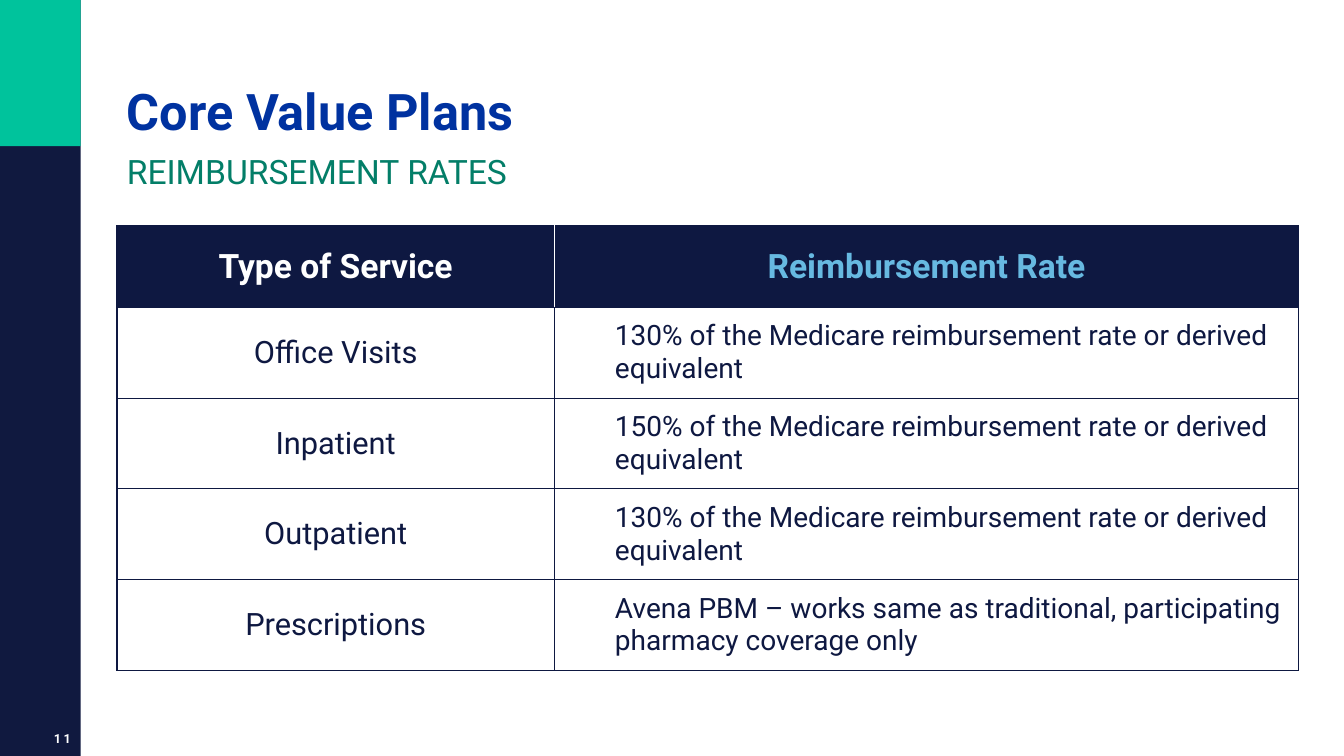
from dataclasses import dataclass

from lxml import etree
from pptx import Presentation
from pptx import util as u
from pptx.dml.color import RGBColor
from pptx.enum import shapes, text
from pptx.oxml import ns

PX = 9144  # EMU per px, 100 px to the inch
FONT = "Roboto"
INK = {
    "navy": "10193F",
    "teal": "00C39C",
    "grid": "0E1841",
    "blue": "0032A0",
    "green": "037E68",
    "sky": "67B9E1",
    "white": "FFFFFF",
}
LEFT, MID, RIGHT = text.PP_ALIGN.LEFT, text.PP_ALIGN.CENTER, text.PP_ALIGN.RIGHT
TOP, CENTER, BOTTOM = text.MSO_ANCHOR.TOP, text.MSO_ANCHOR.MIDDLE, text.MSO_ANCHOR.BOTTOM


@dataclass(frozen=True)
class Box:
    x: int
    y: int
    w: int
    h: int

    def emu(self) -> list[u.Emu]:
        return [u.Emu(v * PX) for v in (self.x, self.y, self.w, self.h)]


@dataclass(frozen=True)
class Style:
    size: int
    ink: str
    bold: bool = False
    align: text.PP_ALIGN = LEFT
    indent: int = 0
    leading: float = 1.0
    track: int = 0  # hundredths of a point


@dataclass(frozen=True)
class Label:
    words: str
    box: Box
    style: Style
    anchor: text.MSO_ANCHOR


BARS = [(Box(0, 0, 80, 750), "navy"), (Box(0, 0, 80, 145), "teal")]
LABELS = [
    Label("Core Value Plans", Box(116, 0, 1153, 145),
          Style(36, "blue", True, leading=0.9), BOTTOM),
    Label("11", Box(0, 716, 80, 34),
          Style(9, "white", True, RIGHT, track=170), CENTER),
    Label("REIMBURSEMENT RATES", Box(116, 145, 1153, 51), Style(24, "green"), TOP),
]

GRID = Box(116, 224, 1172, 441)
COLS = [434, 738]
ROWS = [81, 90, 90, 90, 90]
HEADS = [Style(24, "white", True, MID), Style(24, "sky", True, MID)]
BODY = [Style(22, "grid", align=MID), Style(20, "grid", indent=50)]
RATE = "of the Medicare reimbursement rate or derived equivalent"
RATES = [
    ("Type of Service", "Reimbursement Rate"),
    ("Office Visits", f"130% {RATE}"),
    ("Inpatient", f"150% {RATE}"),
    ("Outpatient", f"130% {RATE}"),
    ("Prescriptions",
     "Avena PBM – works same as traditional, participating pharmacy coverage only"),
]


def color(name: str) -> RGBColor:
    return RGBColor.from_string(INK[name])


def write(frame, words: str, style: Style) -> None:
    frame.word_wrap = True
    para = frame.paragraphs[0]
    para.alignment = style.align
    para.line_spacing = style.leading
    if style.indent:
        para.level = 1
        props = para._p.get_or_add_pPr()
        props.set("marL", str(style.indent * PX))
        props.set("indent", "0")
    run = para.add_run()
    run.text = words
    font = run.font
    font.name, font.size, font.bold = FONT, u.Pt(style.size), style.bold
    font.color.rgb = color(style.ink)
    if style.track:
        run._r.get_or_add_rPr().set("spc", str(style.track))


def add_bar(slide, box: Box, ink: str) -> None:
    bar = slide.shapes.add_shape(shapes.MSO_SHAPE.RECTANGLE, *box.emu())
    bar.shadow.inherit = False
    bar.fill.solid()
    bar.fill.fore_color.rgb = color(ink)
    bar.line.fill.background()


def add_label(slide, label: Label) -> None:
    frame = slide.shapes.add_textbox(*label.box.emu()).text_frame
    frame.vertical_anchor = label.anchor
    write(frame, label.words, label.style)


def edge(cell, inks: dict[str, str]) -> None:
    """Draw 1 pt cell borders; the lines must come before the fill."""
    props = cell._tc.get_or_add_tcPr()
    for spot, (side, ink) in enumerate(inks.items()):
        line = etree.Element(ns.qn(f"a:ln{side}"), w=str(u.Pt(1)))
        fill = etree.SubElement(line, ns.qn("a:solidFill"))
        etree.SubElement(fill, ns.qn("a:srgbClr"), val=INK[ink])
        props.insert(spot, line)


def add_rates(slide) -> None:
    table = slide.shapes.add_table(len(ROWS), len(COLS), *GRID.emu()).table
    table.first_row = table.horz_banding = False
    for col, width in zip(table.columns, COLS):
        col.width = u.Emu(width * PX)
    for row, height in zip(table.rows, ROWS):
        row.height = u.Emu(height * PX)
    for r, line in enumerate(RATES):
        for c, words in enumerate(line):
            cell = table.cell(r, c)
            cell.vertical_anchor = CENTER
            inks = dict.fromkeys("LRTB", "grid")
            if r == 0:
                cell.fill.solid()
                cell.fill.fore_color.rgb = color("grid")
                inks["R" if c == 0 else "L"] = "white"
            else:
                cell.fill.background()
            edge(cell, inks)
            write(cell.text_frame, words, (BODY if r else HEADS)[c])


def main() -> None:
    deck = Presentation()
    deck.slide_width, deck.slide_height = u.Emu(1333 * PX), u.Emu(750 * PX)
    slide = deck.slides.add_slide(deck.slide_layouts[6])
    for box, ink in BARS:
        add_bar(slide, box, ink)
    add_rates(slide)
    for label in LABELS:
        add_label(slide, label)
    deck.save("out.pptx")


if __name__ == "__main__":
    main()
